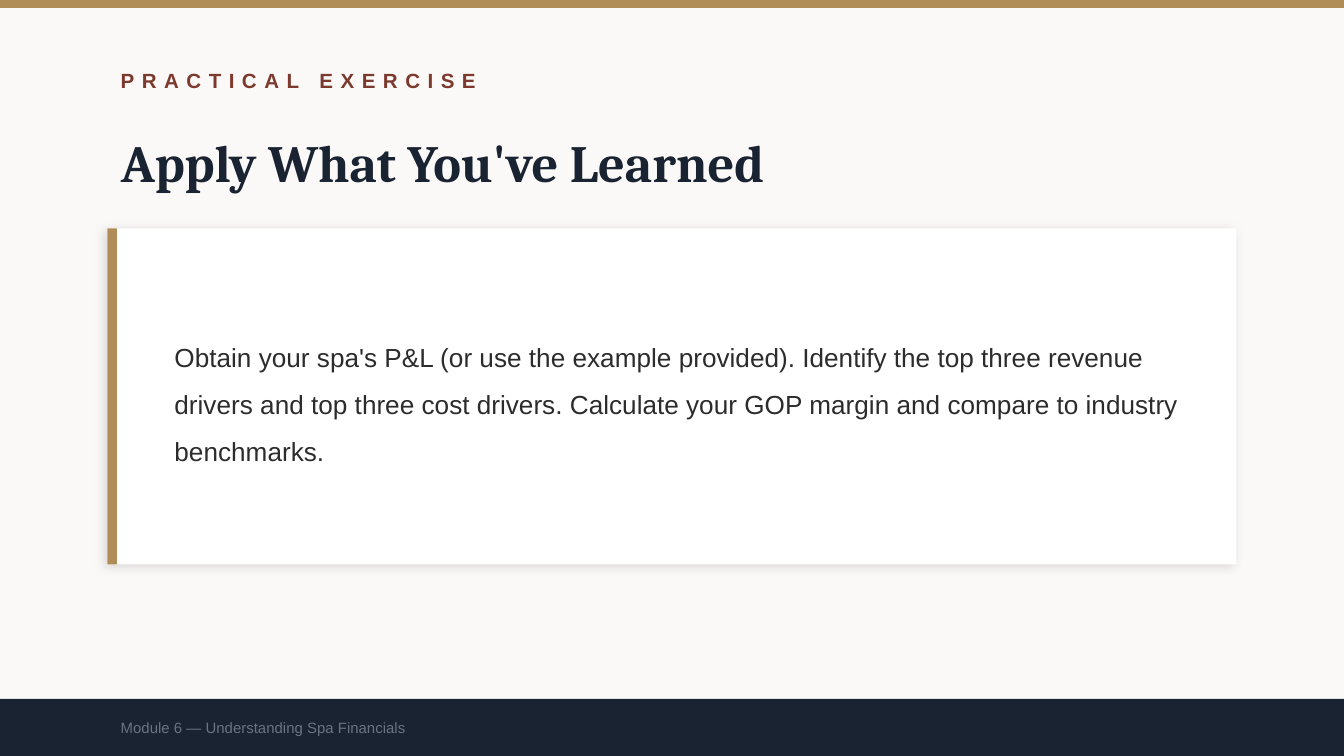
from dataclasses import dataclass

from lxml import etree
from pptx import Presentation
from pptx import util as u
from pptx.dml.color import RGBColor
from pptx.enum import shapes, text
from pptx.oxml import ns


@dataclass(frozen=True)
class Theme:
    """Colours, fonts and type sizes of the slide."""
    paper: str = "FAF9F7"
    white: str = "FFFFFF"
    gold: str = "B08D57"
    rust: str = "7C3A2E"
    navy: str = "1A2332"
    ink: str = "2C2C2C"
    grey: str = "6B7280"
    heading_font: str = "Cambria"
    body_font: str = "Arial"
    title_size: int = 28
    body_size: int = 14
    label_size: int = 11
    footer_size: int = 8


THEME = Theme()
WIDTH = 10
HEIGHT = WIDTH * 9 / 16
MARGIN = 0.8
TEXT_WIDTH = 8
CARD_TOP, CARD_HEIGHT = 1.7, 2.5
FOOTER_TOP = 5.2


def add_panel(slide, left, top, width, height, color):
    """Add a plain filled rectangle without outline or shadow."""
    panel = slide.shapes.add_shape(
        shapes.MSO_SHAPE.RECTANGLE, *map(u.Inches, (left, top, width, height)))
    panel.fill.solid()
    panel.fill.fore_color.rgb = RGBColor.from_string(color)
    panel.line.fill.background()
    panel.shadow.inherit = False
    return panel


def add_soft_shadow(shape, blur=6, distance=2, angle=135, opacity=12):
    """Give a shape a faint outer shadow."""
    effects = shape._element.spPr.find(ns.qn("a:effectLst"))
    shadow = etree.SubElement(
        effects, ns.qn("a:outerShdw"), blurRad=str(u.Pt(blur)),
        dist=str(u.Pt(distance)), dir=str(angle * 60000),
        algn="bl", rotWithShape="0")
    color = etree.SubElement(shadow, ns.qn("a:srgbClr"), val="000000")
    etree.SubElement(color, ns.qn("a:alpha"), val=str(opacity * 1000))


def write_text(shape, words, size, color, font=THEME.body_font, bold=False,
               tracking=0, line_spacing=None):
    """Write one left-aligned, vertically centred paragraph in a shape."""
    frame = shape.text_frame
    frame.word_wrap = True
    frame.auto_size = text.MSO_AUTO_SIZE.NONE
    frame.vertical_anchor = text.MSO_ANCHOR.MIDDLE
    paragraph = frame.paragraphs[0]
    paragraph.alignment = text.PP_ALIGN.LEFT
    if line_spacing:
        paragraph.line_spacing = line_spacing
    run = paragraph.add_run()
    run.text = words
    run.font.name = font
    run.font.size = u.Pt(size)
    run.font.bold = bold
    run.font.color.rgb = RGBColor.from_string(color)
    if tracking:
        run.font._element.set("spc", str(tracking * 100))


def add_label(slide, left, top, width, height, words, size, color, **style):
    """Add a text box holding one paragraph."""
    box = slide.shapes.add_textbox(*map(u.Inches, (left, top, width, height)))
    write_text(box, words, size, color, **style)


def set_title(slide, words):
    """Place and format the title placeholder."""
    title = slide.shapes.title
    title.left, title.top = u.Inches(MARGIN), u.Inches(0.9)
    title.width, title.height = u.Inches(TEXT_WIDTH), u.Inches(0.6)
    write_text(title, words, THEME.title_size, THEME.navy,
               font=THEME.heading_font, bold=True)


def add_exercise_card(slide, words):
    """Add the white card with its gold edge and exercise text."""
    card = add_panel(slide, MARGIN, CARD_TOP, WIDTH - 2 * MARGIN, CARD_HEIGHT,
                     THEME.white)
    add_soft_shadow(card)
    add_panel(slide, MARGIN, CARD_TOP, 0.07, CARD_HEIGHT, THEME.gold)
    add_label(slide, MARGIN + 0.4, CARD_TOP + 0.2, 7.7, CARD_HEIGHT - 0.4,
              words, THEME.body_size, THEME.ink, line_spacing=1.5)


def add_footer(slide, words):
    """Add the dark footer band and its caption."""
    height = HEIGHT - FOOTER_TOP
    add_panel(slide, 0, FOOTER_TOP, WIDTH, height, THEME.navy)
    add_label(slide, MARGIN, FOOTER_TOP, TEXT_WIDTH, height, words,
              THEME.footer_size, THEME.grey)


def main():
    """Build and save the practical exercise slide."""
    presentation = Presentation()
    presentation.slide_width = u.Inches(WIDTH)
    presentation.slide_height = u.Inches(HEIGHT)
    slide = presentation.slides.add_slide(presentation.slide_layouts[5])
    slide.background.fill.solid()
    slide.background.fill.fore_color.rgb = RGBColor.from_string(THEME.paper)

    add_panel(slide, 0, 0, WIDTH, 0.06, THEME.gold)
    add_label(slide, MARGIN, 0.4, TEXT_WIDTH, 0.4, "PRACTICAL EXERCISE",
              THEME.label_size, THEME.rust, bold=True, tracking=4)
    set_title(slide, "Apply What You've Learned")
    add_exercise_card(
        slide,
        "Obtain your spa's P&L (or use the example provided). Identify the "
        "top three revenue drivers and top three cost drivers. Calculate your "
        "GOP margin and compare to industry benchmarks.")
    add_footer(slide, "Module 6 — Understanding Spa Financials")
    presentation.save("out.pptx")


if __name__ == "__main__":
    main()
